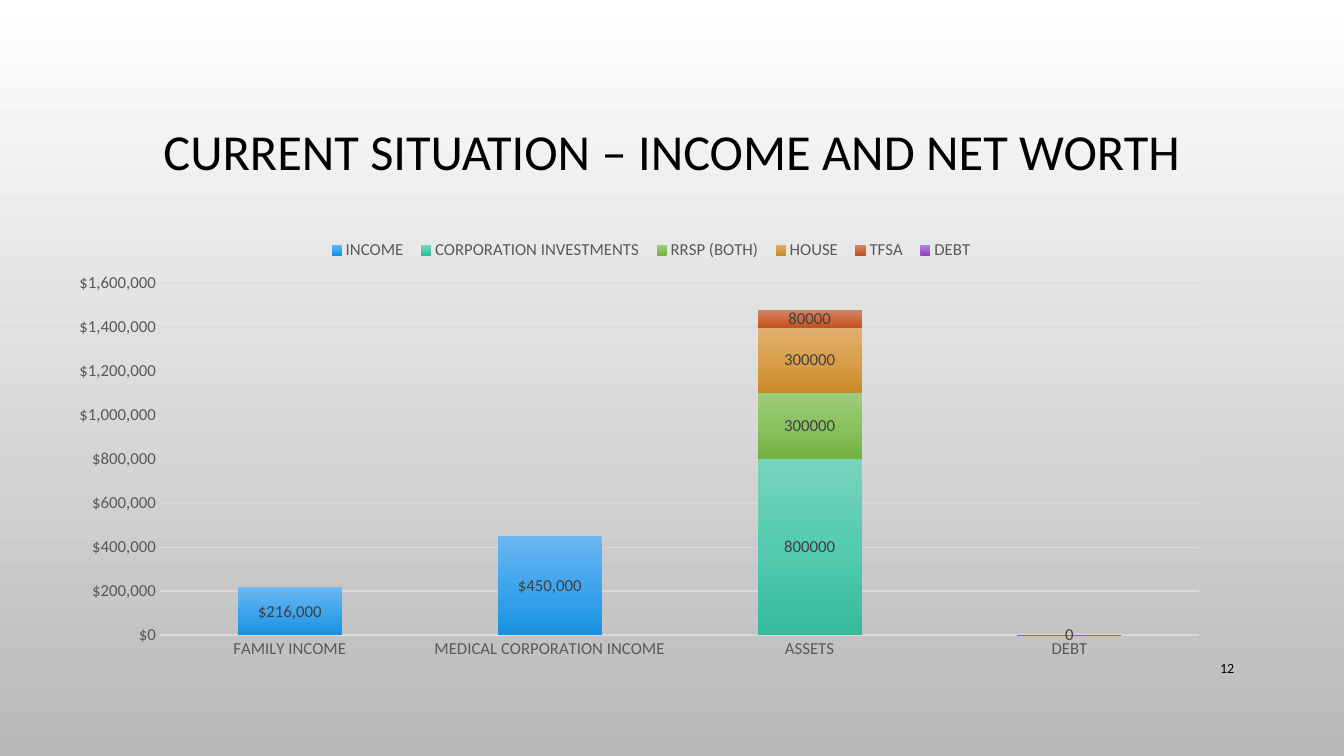
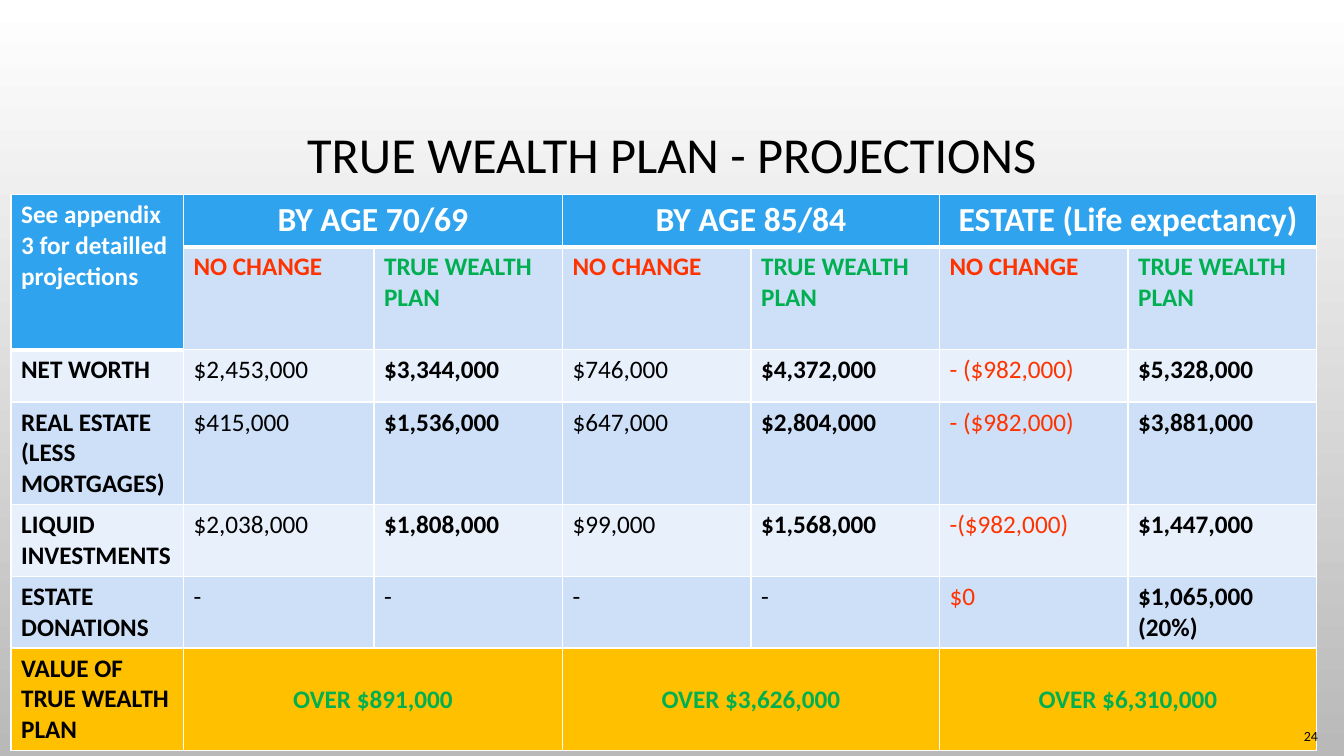
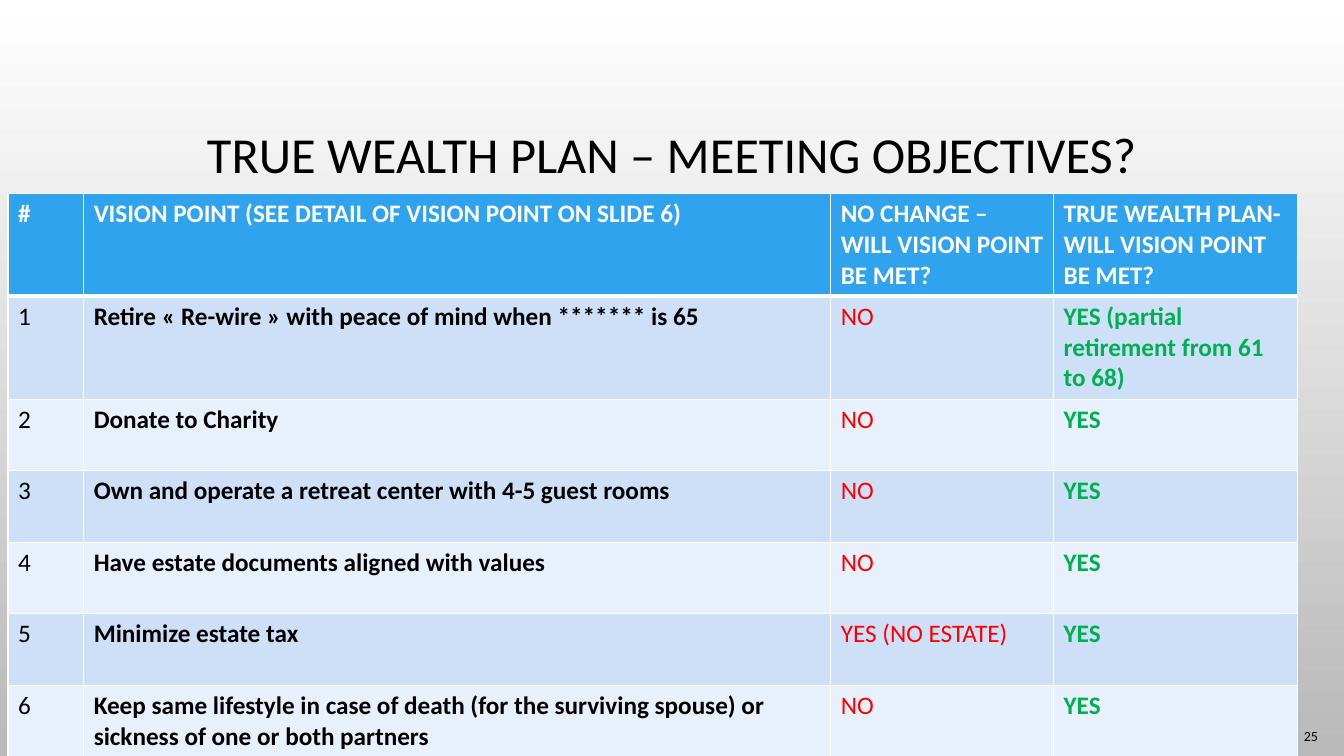
from copy import deepcopy
from dataclasses import dataclass

from lxml.etree import SubElement
from pptx import Presentation
from pptx.chart.data import CategoryChartData
from pptx.dml.color import RGBColor
from pptx.enum.chart import XL_CHART_TYPE, XL_LABEL_POSITION, XL_LEGEND_POSITION, XL_TICK_MARK
from pptx.enum.text import MSO_ANCHOR, PP_ALIGN
from pptx.oxml.ns import qn
from pptx.util import Inches, Pt


@dataclass(frozen=True)
class Theme:
    font: str = "Calibri"
    background: tuple[str, ...] = ("FFFFFF", "B9B9B9")
    black: str = "000000"
    white: str = "FFFFFF"
    header: str = "2FA3EE"
    band_dark: str = "CDE0F8"
    band_light: str = "E8F0FC"
    total: str = "FFC000"
    orange: str = "FF3300"
    red: str = "FF0000"
    green: str = "00B050"
    axis_text: str = "595959"
    label_text: str = "404040"
    grid: str = "D9D9D9"
    title_size: int = 36
    heading_size: int = 24
    body_size: int = 18
    chart_size: int = 12
    number_size: int = 10


T = Theme()
DOLLARS = "[$$-1009]#,##0"


@dataclass(frozen=True)
class Series:
    name: str
    values: tuple[int | None, ...]
    colors: tuple[str, str, str]
    label_format: str = "General"


@dataclass(frozen=True)
class Cell:
    text: str
    color: str = T.black
    bold: bool = True
    fill: str = T.header
    size: int = T.body_size
    centered: bool = False
    middle: bool = False
    rows: int = 1
    cols: int = 1


Grid = list[list[Cell | None]]


def rgb(color: str) -> RGBColor:
    return RGBColor.from_string(color)


def set_font(font, size: int, color: str, bold: bool = False) -> None:
    font.name, font.size, font.bold = T.font, Pt(size), bold
    font.color.rgb = rgb(color)


def write(tf, text: str, *, size: int, color: str = T.black, bold: bool = False,
          align=PP_ALIGN.LEFT, line_spacing: float | None = None) -> None:
    p = tf.paragraphs[0]
    p.alignment = align
    if line_spacing:
        p.line_spacing = line_spacing
    r = p.add_run()
    r.text = text
    set_font(r.font, size, color, bold)


def fill_gradient(fill, holder, colors: tuple[str, ...]) -> None:
    """Fill from top to bottom with evenly spaced colours; holder is the XML around the fill."""
    fill.gradient()
    fill.gradient_angle = 270
    stop_list = next(holder.iter(qn("a:gsLst")))
    while len(stop_list) < len(colors):
        stop_list.append(deepcopy(stop_list[0]))
    for i, (stop, color) in enumerate(zip(fill.gradient_stops, colors)):
        stop.color.rgb = rgb(color)
        stop.position = i / (len(colors) - 1)


def add_box(s, left: float, top: float, width: float, height: float, text: str, **fmt) -> None:
    tf = s.shapes.add_textbox(Inches(left), Inches(top), Inches(width), Inches(height)).text_frame
    tf.word_wrap = True
    tf.vertical_anchor = MSO_ANCHOR.MIDDLE
    write(tf, text, **fmt)


def add_page(prs, title: str, title_height: float = 1.75):
    s = prs.slides.add_slide(prs.slide_layouts[6])
    fill_gradient(s.background.fill, s.element, T.background)
    add_box(s, 1, 0.68, 11.33, title_height, title, size=T.title_size,
            align=PP_ALIGN.CENTER, line_spacing=0.9)
    return s


def add_number(s, number: str, left: float = 12.33, top: float = 7.1) -> None:
    add_box(s, left, top, 0.84, 0.4, number, size=T.number_size, align=PP_ALIGN.RIGHT)


def set_layout(part, x: float, y: float, w: float, h: float, inner: bool = False) -> None:
    """Place a plot area or legend by fractions of the chart."""
    for old in part.findall(qn("c:layout")):
        part.remove(old)
    layout = part.makeelement(qn("c:layout"))
    manual = SubElement(layout, qn("c:manualLayout"))
    settings = [("layoutTarget", "inner")] if inner else []
    settings += [("xMode", "edge"), ("yMode", "edge")]
    settings += [("x", x), ("y", y), ("w", w), ("h", h)]
    for tag, value in settings:
        SubElement(manual, qn(f"c:{tag}")).set("val", str(value))
    part.insert(0 if inner else 1, layout)


def add_stacked_chart(s, categories: list[str], series: list[Series]) -> None:
    data = CategoryChartData()
    data.categories = categories
    for item in series:
        data.add_series(item.name, item.values)
    chart = s.shapes.add_chart(XL_CHART_TYPE.COLUMN_STACKED, Inches(0.68), Inches(2),
                               Inches(11.33), Inches(5.06), data).chart
    chart.has_title = False
    set_font(chart.font, T.number_size, T.black)

    chart.has_legend = True
    legend = chart.legend
    legend.position = XL_LEGEND_POSITION.BOTTOM
    legend.include_in_layout = False
    set_font(legend.font, T.chart_size, T.axis_text)
    set_layout(legend._element, 0.22, 0.07, 0.58, 0.05)
    set_layout(next(chart.element.iter(qn("c:plotArea"))), 0.08, 0.16, 0.91, 0.69, inner=True)

    for axis in (chart.category_axis, chart.value_axis):
        axis.major_tick_mark = axis.minor_tick_mark = XL_TICK_MARK.NONE
        set_font(axis.tick_labels.font, T.chart_size, T.axis_text)
    chart.category_axis.format.line.color.rgb = rgb(T.grid)
    chart.category_axis.format.line.width = Pt(1)
    values = chart.value_axis
    values.minimum_scale, values.maximum_scale, values.major_unit = 0, 1600000, 200000
    values.format.line.fill.background()
    values.has_major_gridlines = True
    values.major_gridlines.format.line.color.rgb = rgb(T.grid)
    values.major_gridlines.format.line.width = Pt(0.75)
    values.tick_labels.number_format = DOLLARS
    values.tick_labels.number_format_is_linked = False

    plot = chart.plots[0]
    plot.gap_width, plot.overlap, plot.vary_by_categories = 150, 100, False
    for drawn, item in zip(plot.series, series):
        fill_gradient(drawn.format.fill, drawn._element, item.colors)
        labels = drawn.data_labels
        labels.show_value = True
        labels.position = XL_LABEL_POSITION.CENTER
        labels.number_format = item.label_format
        labels.number_format_is_linked = False
        set_font(labels.font, T.chart_size, T.label_text)


def set_borders(cell, **widths: float) -> None:
    tc_pr = cell._tc.get_or_add_tcPr()
    for side in "LRTB":
        ln = SubElement(tc_pr, qn(f"a:ln{side}"), w=str(Pt(widths.get(side, 1))))
        SubElement(SubElement(ln, qn("a:solidFill")), qn("a:srgbClr"), val=T.white)


def add_grid(s, left: float, top: float, widths: list[float], heights: list[float],
             grid: Grid) -> None:
    table = s.shapes.add_table(len(heights), len(widths), Inches(left), Inches(top),
                               Inches(sum(widths)), Inches(sum(heights))).table
    table.first_row = table.horz_banding = False
    for column, width in zip(table.columns, widths):
        column.width = Inches(width)
    for row, height in zip(table.rows, heights):
        row.height = Inches(height)

    header_places = set()
    for i, line in enumerate(grid):
        for j, spec in enumerate(line):
            if spec is None:
                continue
            is_header = spec.fill == T.header
            for y in range(i, i + spec.rows):
                for x in range(j, j + spec.cols):
                    below_header = not is_header and (y - 1, x) in header_places
                    set_borders(table.cell(y, x), T=3 if below_header else 1,
                                B=3 if is_header and y == i + spec.rows - 1 else 1)
                    table.cell(y, x).fill.solid()
                    table.cell(y, x).fill.fore_color.rgb = rgb(spec.fill)
                    if is_header:
                        header_places.add((y, x))
            cell = table.cell(i, j)
            if spec.rows * spec.cols > 1:
                cell.merge(table.cell(i + spec.rows - 1, j + spec.cols - 1))
            if spec.middle:
                cell.vertical_anchor = MSO_ANCHOR.MIDDLE
            write(cell.text_frame, spec.text, size=spec.size, color=spec.color, bold=spec.bold,
                  align=PP_ALIGN.CENTER if spec.centered else PP_ALIGN.LEFT)


def band(index: int) -> str:
    return T.band_light if index % 2 else T.band_dark


def projection_grid() -> Grid:
    headings = ["BY AGE 70/69", "BY AGE 85/84", "ESTATE (Life expectancy)"]
    figures = [
        ("NET WORTH", "$2,453,000", "$3,344,000", "$746,000", "$4,372,000",
         "- ($982,000)", "$5,328,000"),
        ("REAL ESTATE (LESS MORTGAGES)", "$415,000", "$1,536,000", "$647,000", "$2,804,000",
         "- ($982,000)", "$3,881,000"),
        ("LIQUID INVESTMENTS", "$2,038,000", "$1,808,000", "$99,000", "$1,568,000",
         "-($982,000)", "$1,447,000"),
        ("ESTATE DONATIONS", "-", "-", "-", "-", "$0", "$1,065,000 (20%)"),
    ]
    gains = ["OVER $891,000", "OVER $3,626,000", "OVER $6,310,000"]

    top: list[Cell | None] = [Cell("See appendix 3 for detailled projections", T.white, rows=2)]
    plans: list[Cell | None] = [None]
    total: list[Cell | None] = [Cell("VALUE OF TRUE WEALTH PLAN", fill=T.total)]
    for heading, gain in zip(headings, gains):
        top += [Cell(heading, T.white, size=T.heading_size, centered=True, cols=2), None]
        plans += [Cell("NO CHANGE", T.orange, fill=band(0)),
                  Cell("TRUE WEALTH PLAN", T.green, fill=band(0))]
        total += [Cell(gain, T.green, fill=T.total, centered=True, middle=True, cols=2), None]
    body = [[Cell(text, T.orange if j == 5 else T.black, j % 2 == 0 and text != "-", band(i))
             for j, text in enumerate(line)] for i, line in enumerate(figures, 1)]
    return [top, plans, *body, total]


def objective_grid() -> Grid:
    headings = ["#", "VISION POINT (SEE DETAIL OF VISION POINT ON SLIDE 6)",
                "NO CHANGE – WILL VISION POINT BE MET?",
                "TRUE WEALTH PLAN- WILL VISION POINT BE MET?"]
    objectives = [
        ("Retire « Re-wire » with peace of mind when ******* is 65", "NO",
         "YES (partial retirement from 61 to 68)"),
        ("Donate to Charity", "NO", "YES"),
        ("Own and operate a retreat center with 4-5 guest rooms", "NO", "YES"),
        ("Have estate documents aligned with values", "NO", "YES"),
        ("Minimize estate tax", "YES (NO ESTATE)", "YES"),
        ("Keep same lifestyle in case of death (for the surviving spouse) or sickness of one "
         "or both partners", "NO", "YES"),
    ]
    grid: Grid = [[Cell(text, T.white) for text in headings]]
    for i, (point, unchanged, planned) in enumerate(objectives):
        grid.append([Cell(str(i + 1), bold=False, fill=band(i)), Cell(point, fill=band(i)),
                     Cell(unchanged, T.red, False, band(i)),
                     Cell(planned, T.green, fill=band(i))])
    return grid


def main() -> None:
    prs = Presentation()
    prs.slide_width, prs.slide_height = Inches(13.33), Inches(7.5)

    s = add_page(prs, "CURRENT SITUATION – INCOME AND NET WORTH", 1.7)
    add_stacked_chart(s, ["FAMILY INCOME", "MEDICAL CORPORATION INCOME", "ASSETS", "DEBT"], [
        Series("INCOME", (216000, 450000, None, None), ("6CB6F1", "3FA6EE", "1891DF"), DOLLARS),
        Series("CORPORATION INVESTMENTS", (None, None, 800000, None),
               ("77D4BC", "54CBAF", "36BA9C")),
        Series("RRSP (BOTH)", (None, None, 300000, None), ("9ECC7E", "8AC25F", "73B142")),
        Series("HOUSE", (None, None, 300000, None), ("E0B071", "DA9F4B", "C98A29")),
        Series("TFSA", (None, None, 80000, None), ("D68669", "CF6C42", "C0541F")),
        Series("DEBT", (None, None, None, 0), ("B685DA", "A664D2", "8F47BF")),
    ])
    add_number(s, "12", 11.5, 6.43)

    s = add_page(prs, "TRUE WEALTH PLAN - PROJECTIONS")
    add_grid(s, 0.11, 1.93, [1.71, 1.89] + [1.87] * 5,
             [0.52, 1.02, 0.52, 1.02, 0.71, 0.71, 1.02], projection_grid())
    add_number(s, "24")

    s = add_page(prs, "TRUE WEALTH PLAN – MEETING OBJECTIVES?")
    add_grid(s, 0.08, 1.92, [0.75, 7.41, 2.21, 2.42], [1.02] * 2 + [0.71] * 5, objective_grid())
    add_number(s, "25")

    prs.save("out.pptx")


if __name__ == "__main__":
    main()
